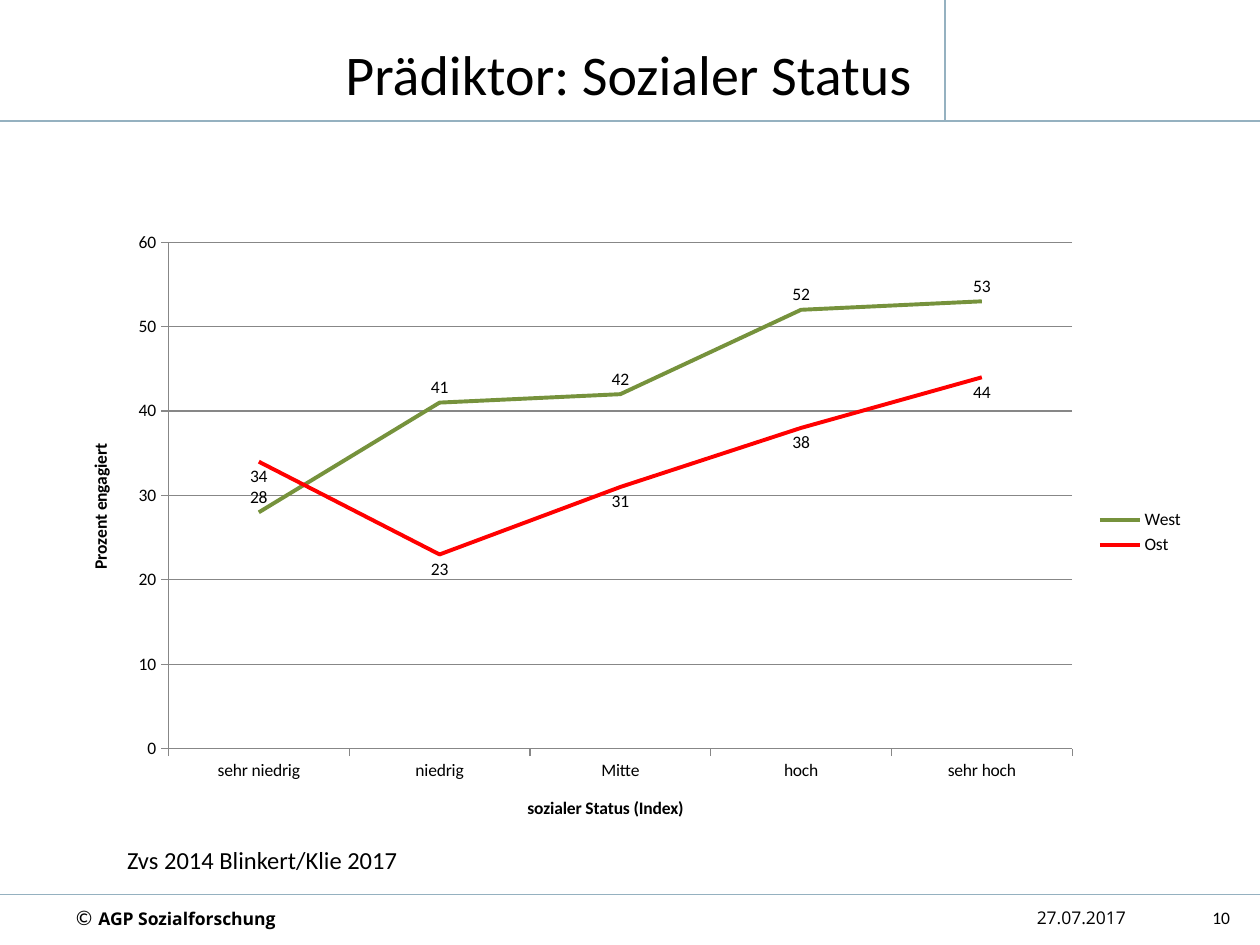
from pptx import Presentation
from pptx.chart.data import CategoryChartData
from pptx.dml.color import RGBColor
from pptx.enum.chart import XL_CHART_TYPE, XL_LABEL_POSITION, XL_LEGEND_POSITION, XL_MARKER_STYLE, XL_TICK_MARK
from pptx.enum.shapes import MSO_CONNECTOR, MSO_SHAPE
from pptx.enum.text import MSO_ANCHOR, PP_ALIGN
from pptx.oxml import parse_xml
from pptx.oxml.ns import nsdecls, qn
from pptx.util import Inches, Pt

LINE_CHART = XL_CHART_TYPE.LINE
ABOVE, BELOW = XL_LABEL_POSITION.ABOVE, XL_LABEL_POSITION.BELOW
LEGEND_RIGHT = XL_LEGEND_POSITION.RIGHT
NO_MARKER = XL_MARKER_STYLE.NONE
TICK_OUT, TICK_NONE = XL_TICK_MARK.OUTSIDE, XL_TICK_MARK.NONE
STRAIGHT = MSO_CONNECTOR.STRAIGHT
RECTANGLE = MSO_SHAPE.RECTANGLE
TOP, MIDDLE = MSO_ANCHOR.TOP, MSO_ANCHOR.MIDDLE
LEFT, CENTER, RIGHT = PP_ALIGN.LEFT, PP_ALIGN.CENTER, PP_ALIGN.RIGHT

BLACK, WHITE, RULE, GRID = "000000", "FFFFFF", "95B1C0", "878787"
BODY, FOOT = "Calibri", "Open Sans"
CATEGORIES = ["sehr niedrig", "niedrig", "Mitte", "hoch", "sehr hoch"]
SERIES = [
    ("West", [28, 41, 42, 52, 53], "76923C", ABOVE),
    ("Ost", [34, 23, 31, 38, 44], "FF0000", BELOW),
]


def color(value):
    """Return the colour of a hex string."""
    return RGBColor.from_string(value)


def set_font(font, size, name=BODY, bold=False):
    """Set a black font of the given size, name and weight."""
    font.size, font.name, font.bold = Pt(size), name, bold
    font.color.rgb = color(BLACK)


def set_line(line, value, width):
    """Set the colour and the width in points of a line."""
    line.color.rgb = color(value)
    line.width = Pt(width)


def fill_text(sp, runs, align=LEFT, anchor=TOP, wrap=True):
    """Fill a shape with one paragraph of (text, size, font, bold) runs."""
    tf = sp.text_frame
    tf.word_wrap, tf.vertical_anchor = wrap, anchor
    p = tf.paragraphs[0]
    p.alignment = align
    for text, size, name, bold in runs:
        r = p.add_run()
        r.text = text
        set_font(r.font, size, name, bold)


def add_text(s, x, y, w, h, runs, **options):
    """Add a text box at the given place in inches."""
    sp = s.shapes.add_textbox(Inches(x), Inches(y), Inches(w), Inches(h))
    fill_text(sp, runs, **options)


def add_rule(s, x1, y1, x2, y2):
    """Add a thin straight line without shadow."""
    sp = s.shapes.add_connector(STRAIGHT, Inches(x1), Inches(y1), Inches(x2), Inches(y2))
    set_line(sp.line, RULE, 1)
    sp._element.spPr.append(parse_xml(f"<a:effectLst {nsdecls('a')}/>"))


def add_header(s, x, y, w, h):
    """Add the title and the rules that frame it."""
    add_rule(s, x + 0.75 * w, y, x + 0.75 * w, y + h)
    add_rule(s, x, y + h, x + w, y + h)
    add_text(s, x + 0.32, y + 0.36, 9.34, 0.44,
             [("Prädiktor: Sozialer Status", 32, BODY, False)], align=CENTER, anchor=MIDDLE)


def add_footer(s, x, y, w):
    """Add the rule, copyright line, date and page number."""
    add_rule(s, x, y, x + w, y)
    add_text(s, x + 0.5, y, 6.3, 0.34, [
        ("©", 12, BODY, False), (" ", 14, BODY, False),
        ("AGP Sozialforschung", 10, FOOT, True)])
    add_text(s, x + 8.13, y + 0.05, 1.01, 0.27, [("27.07.2017", 10, FOOT, False)])
    sp = s.shapes.add_shape(RECTANGLE, Inches(x + 9.38), Inches(y + 0.05), Inches(0.48), Inches(0.27))
    sp.shadow.inherit = False
    sp.fill.background()
    set_line(sp.line, WHITE, 0.75)
    fill_text(sp, [("10", 10, BODY, False)], align=RIGHT, wrap=False)


def set_plot_layout(chart, x, y, w, h):
    """Fix the inner plot area as fractions of the chart."""
    area = chart._chartSpace.chart.plotArea
    for old in area.findall(qn("c:layout")):
        area.remove(old)
    places = "".join(f'<c:{k} val="{v}"/>' for k, v in zip("xywh", (x, y, w, h)))
    area.insert(0, parse_xml(
        f'<c:layout {nsdecls("c")}><c:manualLayout><c:layoutTarget val="inner"/>'
        f'<c:xMode val="edge"/><c:yMode val="edge"/>{places}</c:manualLayout></c:layout>'))


def style_axis(axis, title):
    """Set the title, ticks and line of an axis."""
    axis.major_tick_mark, axis.minor_tick_mark = TICK_OUT, TICK_NONE
    set_line(axis.format.line, GRID, 0.75)
    set_font(axis.tick_labels.font, 10)
    r = axis.axis_title.text_frame.paragraphs[0].add_run()
    r.text = title
    set_font(r.font, 10, bold=True)


def add_status_chart(s, x, y, w, h):
    """Add the line chart of engagement by social status."""
    data = CategoryChartData(number_format="###0")
    data.categories = CATEGORIES
    for name, values, _, _ in SERIES:
        data.add_series(name, values)
    chart = s.shapes.add_chart(LINE_CHART, Inches(x), Inches(y), Inches(w), Inches(h), data).chart
    set_font(chart.font, 10)
    chart.has_title = False
    chart.has_legend = True
    chart.legend.position = LEGEND_RIGHT
    chart.legend.include_in_layout = False
    set_font(chart.legend.font, 10)
    set_plot_layout(chart, 0.093, 0.035, 0.797, 0.812)

    style_axis(chart.category_axis, "sozialer Status (Index)")
    axis = chart.value_axis
    style_axis(axis, "Prozent engagiert")
    axis.minimum_scale, axis.maximum_scale, axis.major_unit = 0, 60, 10
    axis.tick_labels.number_format = "###0"
    axis.tick_labels.number_format_is_linked = False
    axis.has_major_gridlines = True
    set_line(axis.major_gridlines.format.line, GRID, 0.75)

    plot = chart.plots[0]
    plot.vary_by_categories = False
    for series, (_, _, value, position) in zip(plot.series, SERIES):
        series.smooth = False
        series.marker.style = NO_MARKER
        set_line(series.format.line, value, 2.25)
        labels = series.data_labels
        labels.show_value, labels.position = True, position
        labels.number_format, labels.number_format_is_linked = "###0", False
        set_font(labels.font, 10)


def main():
    """Build the slide and save it."""
    prs = Presentation()
    prs.slide_width, prs.slide_height = Inches(10), Inches(7.5)
    s = prs.slides.add_slide(prs.slide_layouts[6])
    add_footer(s, 0, 7.1, 10)
    add_header(s, 0, 0, 10, 0.96)
    add_status_chart(s, 0.5, 1.75, 9, 4.95)
    add_text(s, 0.91, 6.66, 2.59, 0.34,
             [("Zvs 2014 Blinkert/Klie 2017", 14, BODY, False)], wrap=False)
    prs.save("out.pptx")


if __name__ == "__main__":
    main()
